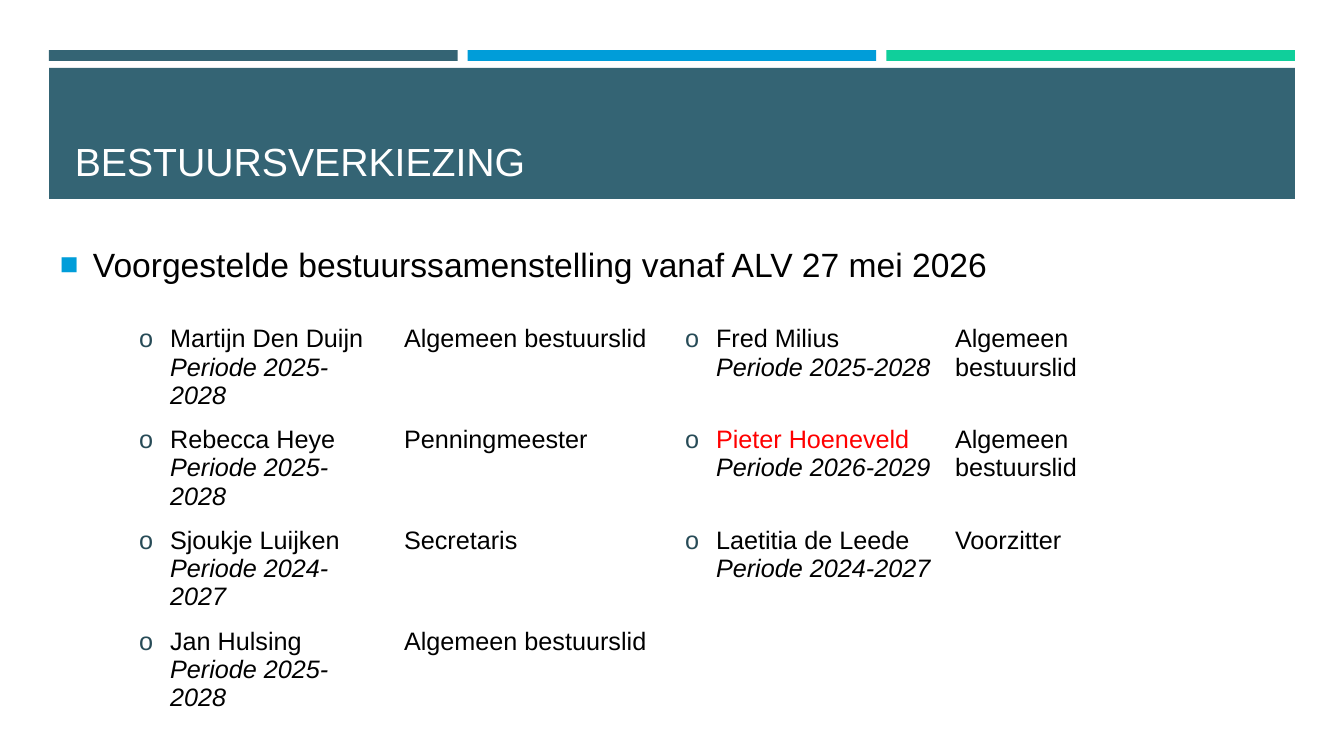
from dataclasses import dataclass

from lxml.etree import SubElement
from pptx import Presentation
from pptx.dml.color import RGBColor as Rgb
from pptx.enum.shapes import MSO_SHAPE as Shape
from pptx.enum.text import MSO_ANCHOR as Anchor
from pptx.oxml.ns import qn
from pptx.util import Pt

EMU_PER_PX = 914400 / 100.8


@dataclass(frozen=True)
class Theme:
    font: str = "Arial"
    teal: str = "346474"
    blue: str = "009DD9"
    green: str = "10CF9B"
    bullet: str = "274B57"
    text: str = "000000"
    light: str = "FFFFFF"
    accent: str = "FF0000"
    title_size: int = 28
    lead_size: int = 24
    table_size: int = 18


THEME = Theme()

MEMBERS = [
    [("Martijn Den Duijn", "2025-2028", "Algemeen bestuurslid"),
     ("Fred Milius", "2025-2028", "Algemeen bestuurslid")],
    [("Rebecca Heye", "2025-2028", "Penningmeester"),
     ("Pieter Hoeneveld", "2026-2029", "Algemeen bestuurslid")],
    [("Sjoukje Luijken", "2024-2027", "Secretaris"),
     ("Laetitia de Leede", "2024-2027", "Voorzitter")],
    [("Jan Hulsing", "2025-2028", "Algemeen bestuurslid")],
]
NEW_MEMBER = "Pieter Hoeneveld"


def px(length):
    return round(length * EMU_PER_PX)


def place(box):
    return [px(length) for length in box]


def style(para, size, color):
    para.font.name = THEME.font
    para.font.size = Pt(size)
    para.font.color.rgb = Rgb.from_string(color)


def add_bullet(para, symbol, color, indent, percent=100):
    props = para._p.get_or_add_pPr()
    props.set("marL", str(px(indent)))
    props.set("indent", str(-px(indent)))
    tint = SubElement(props, qn("a:buClr"))
    SubElement(tint, qn("a:srgbClr"), val=color)
    SubElement(props, qn("a:buSzPct"), val=str(percent * 1000))
    SubElement(props, qn("a:buFont"), typeface=THEME.font)
    SubElement(props, qn("a:buChar"), char=symbol)


def add_bar(page, box, color):
    bar = page.shapes.add_shape(Shape.RECTANGLE, *place(box))
    bar.shadow.inherit = False
    bar.fill.solid()
    bar.fill.fore_color.rgb = Rgb.from_string(color)
    bar.line.fill.background()


def add_text(page, box, text, anchor):
    frame = page.shapes.add_textbox(*place(box)).text_frame
    frame.word_wrap = True
    frame.vertical_anchor = anchor
    para = frame.paragraphs[0]
    para.add_run().text = text
    return para


def add_header(page, box):
    left, top, width, height = box
    gap, stripe, band_top = 10, 11, 18
    bar_width = (width - 2 * gap) / 3
    for index, color in enumerate((THEME.teal, THEME.blue, THEME.green)):
        add_bar(page, (left + index * (bar_width + gap), top, bar_width, stripe), color)
    add_bar(page, (left, top + band_top, width, height - band_top), THEME.teal)
    title_box = (left + 16, top + 28, width - 32, height - 38)
    title = add_text(page, title_box, "BESTUURSVERKIEZING", Anchor.BOTTOM)
    style(title, THEME.title_size, THEME.light)


def add_lead(page, box):
    lead = add_text(page, box, "Voorgestelde bestuurssamenstelling vanaf ALV 27 mei 2026",
                    Anchor.MIDDLE)
    add_bullet(lead, "■", THEME.blue, 33, 92)
    style(lead, THEME.lead_size, THEME.text)


def fill_member(name_cell, role_cell, name, period, role):
    para = name_cell.text_frame.paragraphs[0]
    add_bullet(para, "o", THEME.bullet, 31)
    style(para, THEME.table_size, THEME.text)
    span = para.add_run()
    span.text = name
    if name == NEW_MEMBER:
        span.font.color.rgb = Rgb.from_string(THEME.accent)
    para.add_line_break()
    span = para.add_run()
    span.text = f"Periode {period}"
    span.font.italic = True
    para = role_cell.text_frame.paragraphs[0]
    para.add_run().text = role
    style(para, THEME.table_size, THEME.text)


def add_members(page, box):
    widths = (265, 281, 270, 243)
    table = page.shapes.add_table(len(MEMBERS), len(widths), *place(box)).table
    table.first_row = False
    table.horz_banding = False
    for column, width in zip(table.columns, widths):
        column.width = px(width)
    for cell in table.iter_cells():
        cell.fill.background()
    for row, members in enumerate(MEMBERS):
        for pair, member in enumerate(members):
            fill_member(table.cell(row, 2 * pair), table.cell(row, 2 * pair + 1), *member)


def main():
    deck = Presentation()
    deck.slide_width, deck.slide_height = px(1344), px(756)
    page = deck.slides.add_slide(deck.slide_layouts[6])
    add_header(page, (49, 50, 1246, 149))
    add_lead(page, (50, 234, 1216, 60))
    add_members(page, (129, 320, 1059, 376))
    deck.save("out.pptx")


if __name__ == "__main__":
    main()
